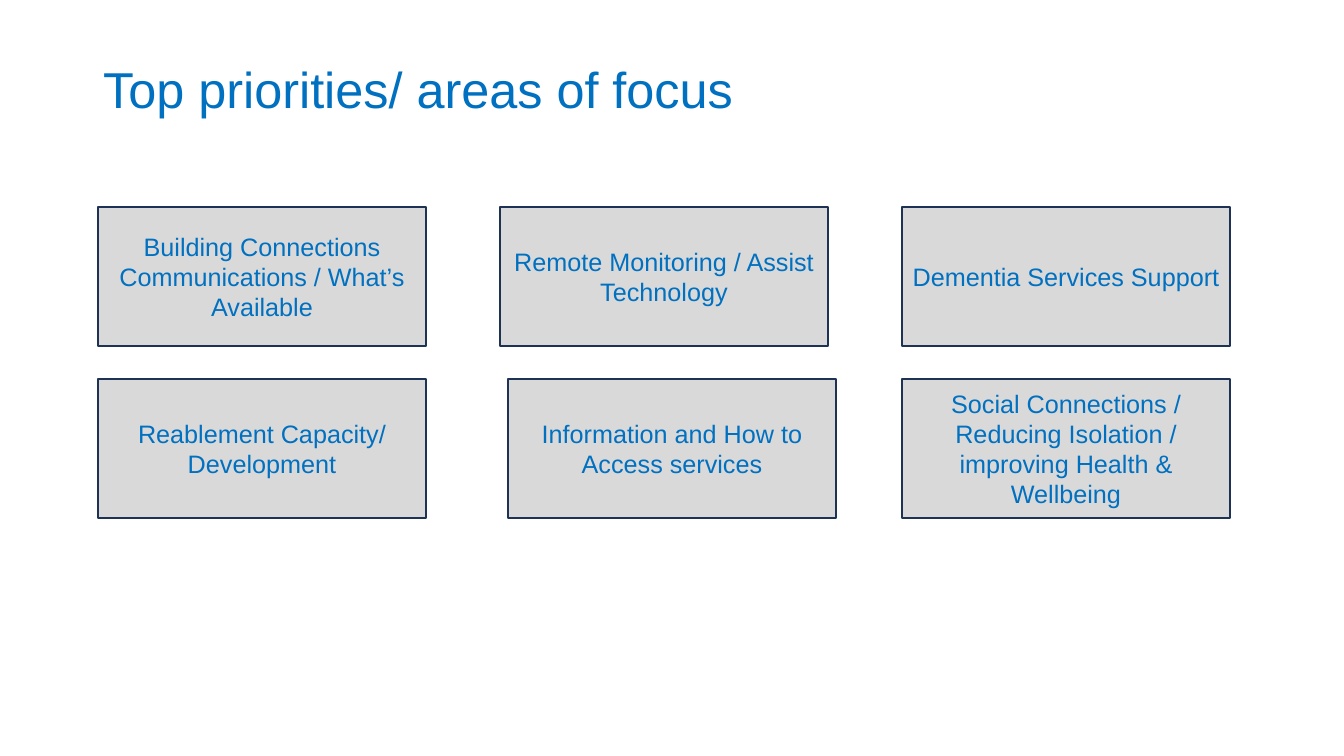
import pptx
import pptx.util
import pptx.dml.color
import pptx.enum.shapes
import pptx.enum.text

TITLE = "Top priorities/ areas of focus"
PRIORITIES = [
    [
        ["Building Connections", "Communications / What’s Available"],
        ["Remote Monitoring / Assist Technology"],
        ["Dementia Services Support"],
    ],
    [
        ["Reablement Capacity/ Development"],
        ["Information and How to Access services"],
        ["Social Connections / Reducing Isolation / improving Health & Wellbeing"],
    ],
]
BLUE, GREY, NAVY = "0070C0", "D9D9D9", "1E3256"
LEFT, TOP, BOX_W, BOX_H = 98, 207, 328, 139
STEP_X, STEP_Y = 402, 172
NUDGES = {(1, 1): 8}
ALIGN = pptx.enum.text.PP_ALIGN


def px(n):
    return pptx.util.Emu(round(n * 914400 / 100.8))


def rgb(value):
    return pptx.dml.color.RGBColor.from_string(value)


def write(tf, lines, size=18, color=BLUE, align=ALIGN.CENTER, spacing=1.0):
    tf.word_wrap = True
    tf.auto_size = pptx.enum.text.MSO_AUTO_SIZE.NONE
    tf.vertical_anchor = pptx.enum.text.MSO_ANCHOR.MIDDLE
    for i, line in enumerate(lines):
        p = tf.paragraphs[0] if i == 0 else tf.add_paragraph()
        p.alignment = align
        p.line_spacing = spacing
        r = p.add_run()
        r.text = line
        r.font.name = "Arial"
        r.font.size = pptx.util.Pt(size)
        r.font.color.rgb = rgb(color)


def add_box(s, x, y, lines):
    sp = s.shapes.add_shape(
        pptx.enum.shapes.MSO_SHAPE.RECTANGLE, px(x), px(y), px(BOX_W), px(BOX_H)
    )
    sp.shadow.inherit = False
    sp.fill.solid()
    sp.fill.fore_color.rgb = rgb(GREY)
    sp.line.color.rgb = rgb(NAVY)
    sp.line.width = pptx.util.Pt(1)
    write(sp.text_frame, lines)


def main():
    prs = pptx.Presentation()
    prs.slide_width, prs.slide_height = px(1344), px(756)
    s = prs.slides.add_slide(prs.slide_layouts[5])

    title = s.shapes.title
    title.left, title.top, title.width, title.height = px(93), px(40), px(1159), px(104)
    write(title.text_frame, [TITLE], size=36, align=ALIGN.LEFT, spacing=0.9)

    for row, boxes in enumerate(PRIORITIES):
        for col, lines in enumerate(boxes):
            x = LEFT + col * STEP_X + NUDGES.get((row, col), 0)
            add_box(s, x, TOP + row * STEP_Y, lines)

    prs.save("out.pptx")


if __name__ == "__main__":
    main()
